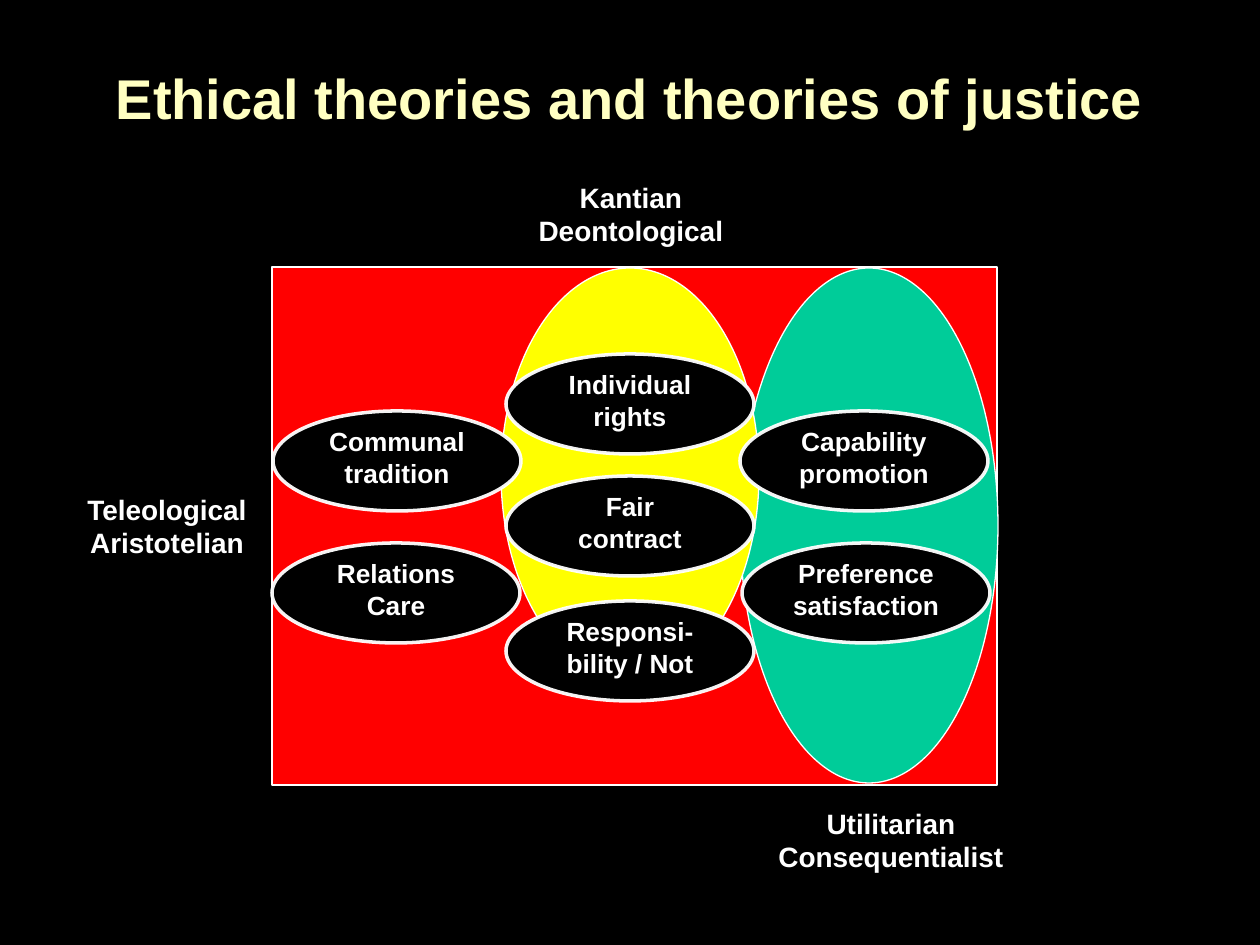
from dataclasses import dataclass

from lxml.etree import SubElement
from pptx import Presentation
from pptx.dml.color import RGBColor
from pptx.enum.shapes import MSO_SHAPE as Preset
from pptx.enum.text import MSO_ANCHOR as Anchor, MSO_AUTO_SIZE as AutoSize, PP_ALIGN as Align
from pptx.oxml.ns import qn
from pptx.util import Emu, Pt

PX_PER_INCH = 126


@dataclass(frozen=True)
class Theme:
    font: str = "Arial"
    background: str = "000000"
    text: str = "FFFFFF"
    title: str = "FFFFC2"
    line: str = "FFFFFF"
    teleological: str = "FF0000"
    deontological: str = "FFFF00"
    utilitarian: str = "00CC99"
    title_size: int = 32
    label_size: int = 16
    theory_size: int = 15
    region_line: float = 0.75
    theory_line: float = 2
    theory_line_alpha: int = 94


@dataclass(frozen=True)
class Region:
    preset: Preset
    left: int
    top: int
    width: int
    height: int
    fill: str


@dataclass(frozen=True)
class Note:
    text: str
    left: int
    top: int


THEME = Theme()
THEORY_SIZE = (248, 100)
LABEL_SIZE = (276, 81)

# Back to front
REGIONS = [
    Region(Preset.CORNER, 272, 267, 725, 518, THEME.teleological),
    Region(Preset.OVAL, 740, 268, 258, 515, THEME.utilitarian),
    Region(Preset.OVAL, 501, 268, 258, 412, THEME.deontological),
]
THEORIES = [
    Note("Responsi-bility / Not", 506, 601),
    Note("Individual rights", 506, 354),
    Note("Communal tradition", 273, 411),
    Note("Preference satisfaction", 742, 543),
    Note("Capability promotion", 740, 411),
    Note("Relations Care", 272, 543),
    Note("Fair contract", 506, 476),
]
LABELS = [
    Note("Utilitarian\nConsequentialist", 753, 800),
    Note("Kantian\nDeontological", 493, 174),
    Note("Teleological\nAristotelian", 29, 486),
]


def px(length: int) -> Emu:
    return Emu(round(length * 914400 / PX_PER_INCH))


def rgb(color: str) -> RGBColor:
    return RGBColor.from_string(color)


def write(frame, text: str, *, size: int, color: str = THEME.text,
          anchor: Anchor = Anchor.TOP) -> None:
    """Fill a text frame with bold centred lines, one paragraph each."""
    frame.word_wrap = True
    frame.vertical_anchor = anchor
    frame.text = text
    for para in frame.paragraphs:
        para.alignment = Align.CENTER
        for span in para.runs:
            span.font.name = THEME.font
            span.font.size = Pt(size)
            span.font.bold = True
            span.font.color.rgb = rgb(color)


def draw_region(page, region: Region, line_width: float = THEME.region_line):
    shape = page.shapes.add_shape(region.preset, px(region.left), px(region.top),
                                  px(region.width), px(region.height))
    shape.shadow.inherit = False
    shape.fill.solid()
    shape.fill.fore_color.rgb = rgb(region.fill)
    shape.line.color.rgb = rgb(THEME.line)
    shape.line.width = Pt(line_width)
    return shape


def draw_theory(page, note: Note) -> None:
    oval = draw_region(page, Region(Preset.OVAL, note.left, note.top, *THEORY_SIZE,
                                    THEME.background), THEME.theory_line)
    line_color = oval.element.spPr.find(qn("a:ln")).find(".//" + qn("a:srgbClr"))
    SubElement(line_color, qn("a:alpha"), val=str(THEME.theory_line_alpha * 1000))
    frame = oval.text_frame
    frame.margin_top = frame.margin_bottom = 0
    write(frame, note.text, size=THEME.theory_size)


def draw_label(page, note: Note) -> None:
    box = page.shapes.add_textbox(px(note.left), px(note.top), *map(px, LABEL_SIZE))
    write(box.text_frame, note.text, size=THEME.label_size)
    box.text_frame.auto_size = AutoSize.SHAPE_TO_FIT_TEXT


def main() -> None:
    deck = Presentation()
    deck.slide_width, deck.slide_height = px(1260), px(945)
    page = deck.slides.add_slide(deck.slide_layouts[5])
    page.background.fill.solid()
    page.background.fill.fore_color.rgb = rgb(THEME.background)

    # Title
    title = page.shapes.title
    title.left, title.top, title.width, title.height = map(px, (0, 18, 1260, 158))
    write(title.text_frame, "Ethical theories and theories of justice",
          size=THEME.title_size, color=THEME.title, anchor=Anchor.MIDDLE)

    # Ethical theories as areas; the corner is thick enough to fill its frame
    areas = [draw_region(page, region) for region in REGIONS]
    areas[0].adjustments[0] = 1
    areas[0].adjustments[1] = 0.79

    # Theories of justice
    for theory in THEORIES:
        draw_theory(page, theory)

    # Names of the areas
    for label in LABELS:
        draw_label(page, label)

    deck.save("out.pptx")


if __name__ == "__main__":
    main()
